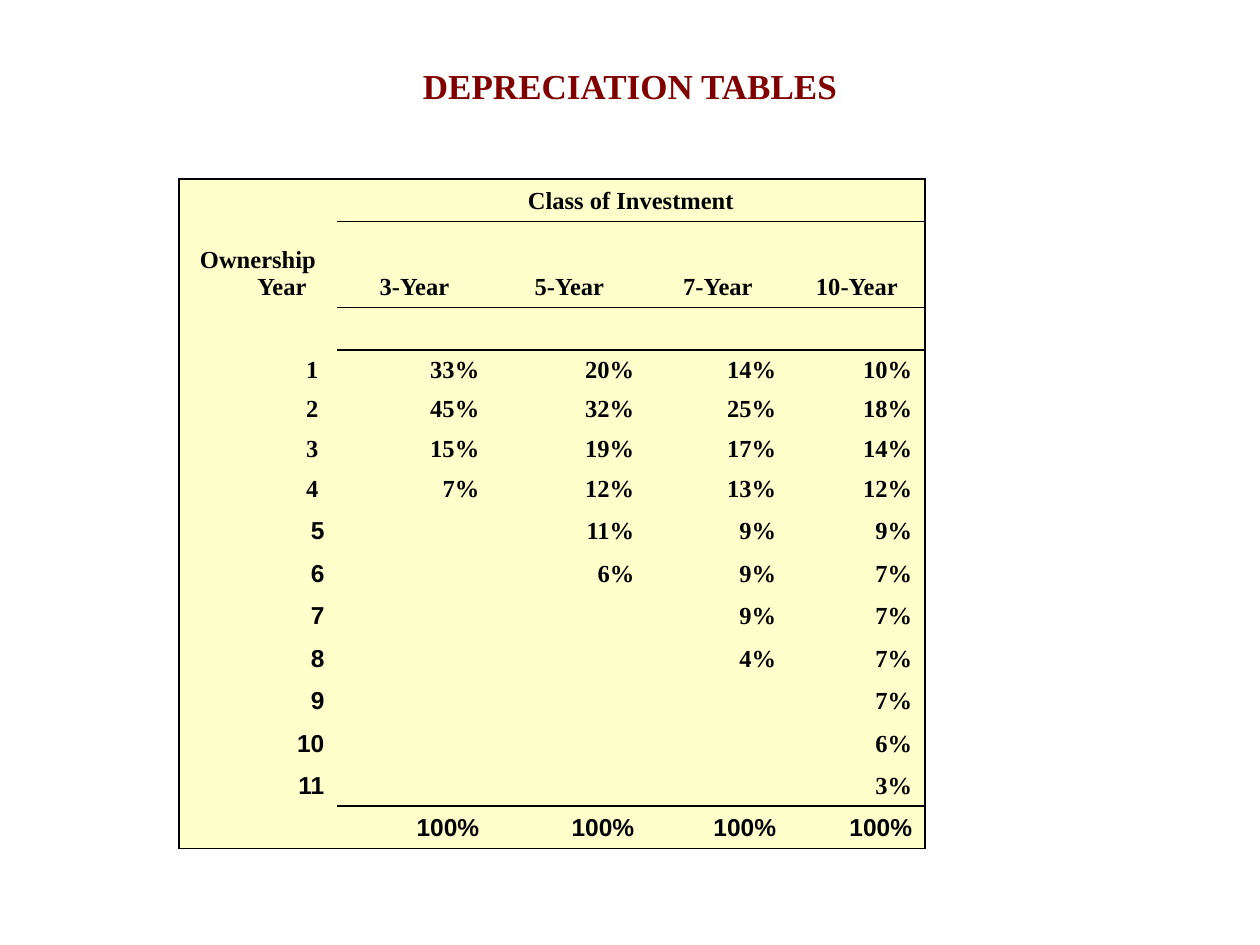
"""Build the depreciation tables slide."""
import pptx
import pptx.dml.color
import pptx.enum.text
import pptx.oxml.ns
import pptx.util
from lxml import etree

PX = 914400 // 126
MAROON = pptx.dml.color.RGBColor(0x80, 0x00, 0x00)
CREAM = pptx.dml.color.RGBColor(0xFF, 0xFF, 0xCC)
BLACK = pptx.dml.color.RGBColor(0x00, 0x00, 0x00)
SERIF, SANS = "Times New Roman", "Arial"
PLAIN_STYLE = "{2D5ABB26-0587-4C30-8999-92F81FD0307C}"
ALIGN = pptx.enum.text.PP_ALIGN
ANCHOR = pptx.enum.text.MSO_ANCHOR
qn = pptx.oxml.ns.qn


def add_run(paragraph, text, face, size, color):
    run = paragraph.add_run()
    run.text = text
    run.font.name = face
    run.font.size = pptx.util.Pt(size)
    run.font.bold = True
    run.font.color.rgb = color


def add_border(cell, side):
    properties = cell._tc.get_or_add_tcPr()
    line = etree.SubElement(properties, qn(f"a:ln{side}"), w="12700")
    fill = etree.SubElement(line, qn("a:solidFill"))
    etree.SubElement(fill, qn("a:srgbClr"), val=str(BLACK))


deck = pptx.Presentation()
deck.slide_width = 1260 * PX
deck.slide_height = 945 * PX
slide = deck.slides.add_slide(deck.slide_layouts[5])

title = slide.shapes.title
title.left, title.top, title.width, title.height = (
    length * PX for length in (63, 38, 1134, 158))
title.text_frame.vertical_anchor = ANCHOR.MIDDLE
title.text_frame.margin_bottom = 70 * PX
heading = title.text_frame.paragraphs[0]
heading.alignment = ALIGN.CENTER
add_run(heading, "DEPRECIATION TABLES", SERIF, 20, MAROON)

rates = [
    ["33%", "20%", "14%", "10%"],
    ["45%", "32%", "25%", "18%"],
    ["15%", "19%", "17%", "14%"],
    ["7%", "12%", "13%", "12%"],
    ["", "11%", "9%", "9%"],
    ["", "6%", "9%", "7%"],
    ["", "", "9%", "7%"],
    ["", "", "4%", "7%"],
    ["", "", "", "7%"],
    ["", "", "", "6%"],
    ["", "", "", "3%"],
]
schedule = [
    ["", "Class of Investment", "", "", ""],
    ["Ownership Year", "3-Year", "5-Year", "7-Year", "10-Year"],
    [""] * 5,
]
for year, shares in enumerate(rates, start=1):
    schedule.append([f"{year} " if year < 5 else str(year)] + shares)
schedule.append([""] + ["100%"] * 4)

column_widths = [158, 155, 155, 142, 136]
row_heights = [39, 86] + [39] * 13
last_row, last_column = len(schedule) - 1, len(column_widths) - 1
ruled_below = {0, 1, last_row - 1}

table = slide.shapes.add_table(
    len(schedule), len(column_widths), 179 * PX, 179 * PX,
    sum(column_widths) * PX, sum(row_heights) * PX).table
table.first_row = table.horz_banding = False
table._tbl.tblPr.find(qn("a:tableStyleId")).text = PLAIN_STYLE
for column, width in zip(table.columns, column_widths):
    column.width = width * PX
for row, height in zip(table.rows, row_heights):
    row.height = height * PX
table.cell(0, 1).merge(table.cell(0, last_column))

for r, entries in enumerate(schedule):
    for c, entry in enumerate(entries):
        cell = table.cell(r, c)
        sides = {
            "L": c == 0,
            "R": c == last_column or cell.is_merge_origin,
            "T": r == 0 or (c > 0 and r - 1 in ruled_below),
            "B": r == last_row or (c > 0 and r in ruled_below),
        }
        for side, ruled in sides.items():
            if ruled:
                add_border(cell, side)
        cell.fill.solid()
        cell.fill.fore_color.rgb = CREAM
        cell.vertical_anchor = ANCHOR.BOTTOM
        paragraph = cell.text_frame.paragraphs[0]
        if not entry:
            etree.SubElement(paragraph._p, qn("a:endParaRPr"), sz="1400")
            continue
        paragraph.alignment = ALIGN.CENTER if r < 2 else ALIGN.RIGHT
        indents = paragraph._p.get_or_add_pPr()
        indents.set("marL", str(48 * PX))
        indents.set("indent", str(-48 * PX))
        sans = r == last_row or (c == 0 and r > 6)
        add_run(paragraph, entry, SANS if sans else SERIF, 14, BLACK)

deck.save("out.pptx")
